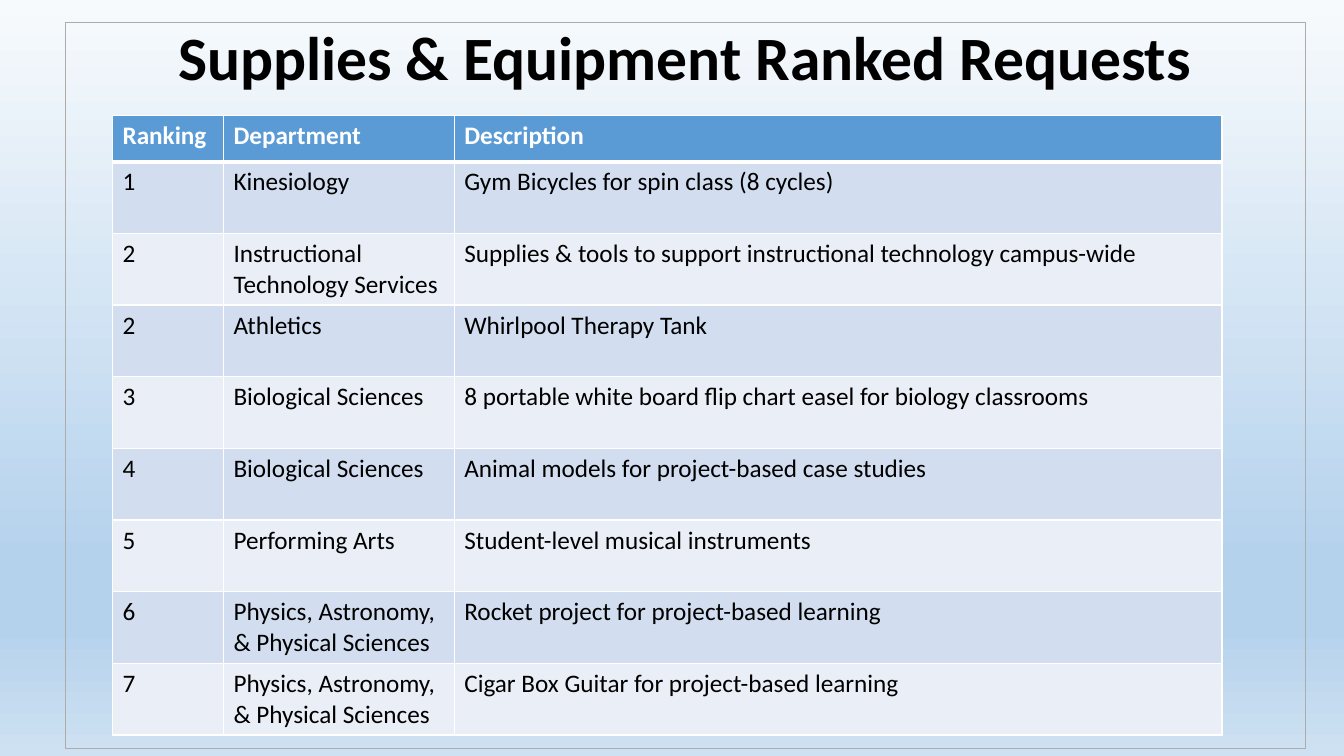
import copy
from dataclasses import dataclass

import pptx
import pptx.dml.color
import pptx.dml.fill
import pptx.enum.shapes
import pptx.enum.text
import pptx.oxml
import pptx.oxml.ns
import pptx.slide
import pptx.table
import pptx.text.text
import pptx.util

Pt = pptx.util.Pt
FONT = "Calibri"
WIDTHS = (79.2, 164.9, 548.4)
HEAD_H, ROW_H = 33, 51.2
STOPS = ((0, "F7FAFD"), (0.74, "B5D2EC"), (0.83, "B5D2EC"), (1, "CEE1F2"))


@dataclass(frozen=True)
class Request:
    rank: str
    dept: str
    item: str


HEAD = Request("Ranking", "Department", "Description")
REQUESTS = (
    Request("1", "Kinesiology", "Gym Bicycles for spin class (8 cycles)"),
    Request("2", "Instructional Technology Services",
            "Supplies & tools to support instructional technology campus-wide"),
    Request("2", "Athletics", "Whirlpool Therapy Tank"),
    Request("3", "Biological Sciences",
            "8 portable white board flip chart easel for biology classrooms"),
    Request("4", "Biological Sciences", "Animal models for project-based case studies"),
    Request("5", "Performing Arts", "Student-level musical instruments"),
    Request("6", "Physics, Astronomy, & Physical Sciences",
            "Rocket project for project-based learning"),
    Request("7", "Physics, Astronomy, & Physical Sciences",
            "Cigar Box Guitar for project-based learning"),
)


def color(code: str) -> pptx.dml.color.RGBColor:
    return pptx.dml.color.RGBColor.from_string(code)


def paint(fill: pptx.dml.fill.FillFormat, code: str) -> None:
    fill.solid()
    fill.fore_color.rgb = color(code)


def style(para: pptx.text.text._Paragraph, size: float, code: str, bold: bool) -> None:
    font = para.font
    font.name, font.size, font.bold = FONT, Pt(size), bold
    font.color.rgb = color(code)


def draw_back(slide: pptx.slide.Slide) -> None:
    fill = slide.background.fill
    fill.gradient()
    fill.gradient_angle = 270
    group = next(slide.element.iter(pptx.oxml.ns.qn("a:gsLst")))
    while len(group) < len(STOPS):
        group.append(copy.deepcopy(group[0]))
    for stop, (place, code) in zip(fill.gradient_stops, STOPS):
        stop.position = place
        stop.color.rgb = color(code)


def draw_title(slide: pptx.slide.Slide) -> None:
    frame = slide.shapes.add_shape(
        pptx.enum.shapes.MSO_SHAPE.RECTANGLE, Pt(46.8), Pt(15.8), Pt(885.6), Pt(519.1))
    frame.shadow.inherit = False
    frame.fill.background()
    frame.line.color.rgb = color("AFABAB")
    frame.line.width = Pt(0.75)
    text = frame.text_frame
    text.word_wrap = True
    text.vertical_anchor = pptx.enum.text.MSO_ANCHOR.TOP
    para = text.paragraphs[0]
    para.text = "Supplies & Equipment Ranked Requests"
    para.alignment = pptx.enum.text.PP_ALIGN.CENTER
    para.line_spacing = 0.9
    para.space_before = Pt(10)
    style(para, 44, "000000", True)


def add_edge(cell: pptx.table._Cell, side: str, width: float) -> None:
    edge = pptx.oxml.parse_xml(
        f'<a:ln{side} {pptx.oxml.ns.nsdecls("a")} w="{Pt(width)}">'
        '<a:solidFill><a:srgbClr val="FFFFFF"/></a:solidFill>'
        f'</a:ln{side}>')
    cell._tc.get_or_add_tcPr().append(edge)


def draw_cell(cell: pptx.table._Cell, text: str, row: int) -> None:
    head = row == 0
    for side in "LRTB":
        thick = (row, side) in ((0, "B"), (1, "T"))
        add_edge(cell, side, 3 if thick else 1)
    paint(cell.fill, "5B9BD5" if head else "D2DEEF" if row % 2 else "EAEFF7")
    para = cell.text_frame.paragraphs[0]
    para.text = text
    style(para, 18, "FFFFFF" if head else "000000", head)


def draw_table(slide: pptx.slide.Slide) -> None:
    rows = (HEAD, *REQUESTS)
    height = HEAD_H + ROW_H * len(REQUESTS)
    table = slide.shapes.add_table(
        len(rows), len(WIDTHS), Pt(80.4), Pt(82.5), Pt(sum(WIDTHS)), Pt(height)).table
    for column, width in zip(table.columns, WIDTHS):
        column.width = Pt(width)
    for row, entry in enumerate(rows):
        table.rows[row].height = Pt(ROW_H if row else HEAD_H)
        for col, text in enumerate((entry.rank, entry.dept, entry.item)):
            draw_cell(table.cell(row, col), text, row)


def main() -> None:
    deck = pptx.Presentation()
    deck.slide_width, deck.slide_height = Pt(960), Pt(540)
    slide = deck.slides.add_slide(deck.slide_layouts[6])
    draw_back(slide)
    draw_title(slide)
    draw_table(slide)
    deck.save("out.pptx")


if __name__ == "__main__":
    main()
